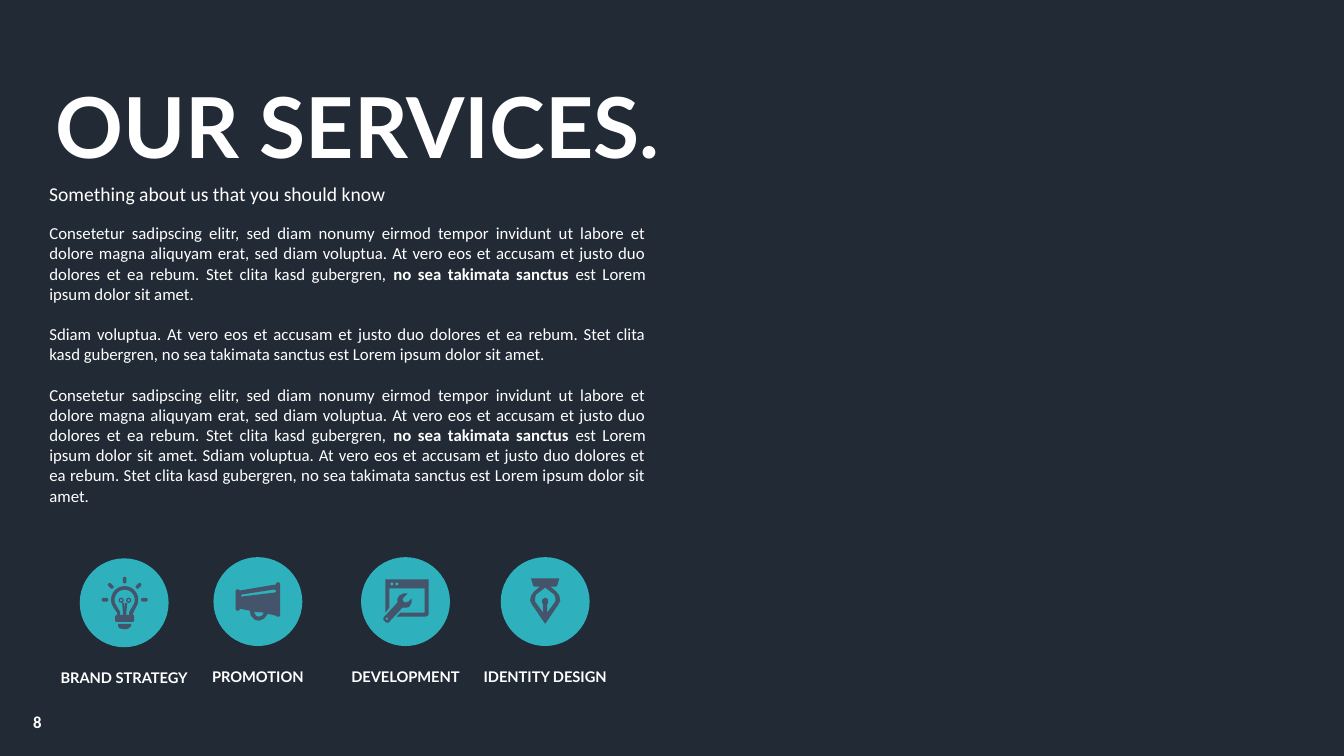
"""Build the "Our services" slide."""
import math

import pptx
import pptx.dml.color
import pptx.enum.shapes
import pptx.enum.text
import pptx.util

Cm, Pt = pptx.util.Cm, pptx.util.Pt
RGB = pptx.dml.color.RGBColor
ALIGN = pptx.enum.text.PP_ALIGN

NAVY = RGB(0x22, 0x2A, 0x35)
TEAL = RGB(0x2E, 0xB0, 0xBD)
SLATE = RGB(0x44, 0x54, 0x6A)
WHITE = RGB(0xFF, 0xFF, 0xFF)

TITLE = "OUR SERVICES."
SUBTITLE = "Something about us that you should know"
OPENING = (
    "Consetetur sadipscing elitr, sed diam nonumy eirmod tempor invidunt ut labore et "
    "dolore magna aliquyam erat, sed diam voluptua. At vero eos et accusam et justo duo "
    "dolores et ea rebum. Stet clita kasd gubergren, "
)
EMPHASIS = "no sea takimata sanctus "
CLOSING = "est Lorem ipsum dolor sit amet."
SECOND = (
    "Sdiam voluptua. At vero eos et accusam et justo duo dolores et ea rebum. "
    "Stet clita kasd gubergren, no sea takimata sanctus est Lorem ipsum dolor sit amet."
)
PARAGRAPHS = [
    [(OPENING, False), (EMPHASIS, True), (CLOSING, False)],
    [(SECOND, False)],
    [(OPENING, False), (EMPHASIS, True), (CLOSING + " " + SECOND, False)],
]
PAGE = "8"
CIRCLE = 2.24
LABEL_DROP = 1.55
ICON_UNIT = Cm(2.54) / 100
FINENESS = 100


def arc(cx, cy, radius, start=0, end=360, steps=24):
    """Return points along an arc, angles in degrees clockwise from the right."""
    angles = [math.radians(start + (end - start) * i / steps) for i in range(steps + 1)]
    return [(cx + radius * math.cos(a), cy + radius * math.sin(a)) for a in angles]


def ray(angle):
    """Return a round-ended ray around the bulb."""
    a = math.radians(angle)
    ends = [(0.5 + d * math.cos(a), -3 + d * math.sin(a)) for d in (21, 18)]
    return (arc(*ends[0], 1.8, angle - 90, angle + 90, 8)
            + arc(*ends[1], 1.8, angle + 90, angle + 270, 8))


BULB = [
    arc(0.5, -3, 13.5, 150, 390) + [
        (9, 10), (9, 12), (10, 13), (10, 18), (9, 19),
        (-8, 19), (-9, 18), (-9, 13), (-7, 12), (-7, 10)],
    arc(0.5, -3, 10, 150, 390) + [(5, 9), (5, 12), (-4, 12), (-4, 9)],
    [(-2, 0), (3, 0), (2, 12), (-1, 12)],
    [(0, 0), (1, 0), (0.5, 7)],
    [(-6, 21), (7, 21), (7, 23), (5, 25), (3, 26), (-2, 26), (-5, 25), (-6, 23)],
] + [arc(x, -2.5, radius) for x in (-3, 4.5) for radius in (2.5, 1.2)] + [
    ray(angle) for angle in range(180, 361, 45)]
MEGAPHONE = [
    [(21, -19), (19, -19), (18, -18), (18, -17), (-18, -11), (-19, -12), (-21, -12),
     (-22, -11), (-22, 8), (-21, 9), (-19, 9), (-18, 8), (-18, 7), (-8, 9), (-7, 14),
     (-3, 18), (1, 19), (6, 17), (10, 12), (18, 14), (19, 15), (21, 15), (22, 14),
     (22, -18)],
    [(-4, 10), (6, 11), (4, 14), (1, 15), (-2, 14)],
    [(17, -9), (-16, -5), (-17, -6), (-16, -7), (16, -12), (18, -11), (18, -10)],
]
WINDOW = [
    [(4, 5), (6, 1), (6, -3), (3, 0), (0, 1), (-2, 0), (-3, -2), (-2, -4), (2, -8),
     (-2, -8), (-6, -6), (-8, -3), (-8, 1), (-22, 16), (-22, 18), (-19, 21), (-17, 21),
     (-3, 6), (1, 6)],
    arc(-18.5, 17, 1.2),
    [(23, -22), (-20, -22), (-20, 11), (-16, 6), (-16, -13), (19, -13), (19, 11),
     (-5, 11), (-9, 15), (20, 15), (22, 14), (23, 12)],
    arc(-13.5, -17.5, 1.5),
    arc(-8.5, -17.5, 1.5),
]
PEN = [
    [(11, -10), (5, -15), (11, -15), (12, -16), (14, -23), (-14, -23), (-12, -16),
     (-11, -15), (-5, -15), (-11, -10), (-14, -6), (-15, -1), (-13, 3), (0, 22),
     (13, 3), (15, -1), (14, -6)],
    [(10, 0), (2, 11), (2, 3), (3, 1), (3, -2), (0, -4), (-3, -2), (-3, 1), (-2, 3),
     (-2, 11), (-10, 0), (-10, -4), (-9, -7), (0, -14), (9, -7), (10, -4)],
]
SERVICES = [
    ("BRAND STRATEGY", 3.13, 15.19, 3.78, BULB),
    ("PROMOTION", 6.5, 15.16, 2.87, MEGAPHONE),
    ("DEVELOPMENT", 10.22, 15.16, 3.28, WINDOW),
    ("IDENTITY DESIGN", 13.74, 15.16, 3.66, PEN),
]


def place(shape, left, top, width, height):
    """Position a shape, in centimetres."""
    shape.left, shape.top, shape.width, shape.height = map(Cm, (left, top, width, height))


def add_run(p, text, font, size, bold=False):
    """Add one white run to a paragraph."""
    r = p.add_run()
    r.text = text
    r.font.name, r.font.size, r.font.bold = font, Pt(size), bold
    r.font.color.rgb = WHITE


def add_text(s, box, text, font, size, bold=False, align=ALIGN.LEFT):
    """Add a one-line text box."""
    tf = s.shapes.add_textbox(*map(Cm, box)).text_frame
    tf.word_wrap = False
    p = tf.paragraphs[0]
    p.alignment = align
    add_run(p, text, font, size, bold)


def paint(shape, color):
    """Give a shape a flat fill without line or shadow."""
    shape.shadow.inherit = False
    shape.fill.solid()
    shape.fill.fore_color.rgb = color
    shape.line.fill.background()


def add_icon(s, x, y, contours):
    """Draw an icon's contours around a centre."""
    fine = [[(px * FINENESS, py * FINENESS) for px, py in c] for c in contours]
    builder = s.shapes.build_freeform(*fine[0][0], scale=ICON_UNIT / FINENESS)
    for i, points in enumerate(fine):
        if i:
            builder.move_to(*points[0])
        builder.add_line_segments(points[1:], close=True)
    paint(builder.convert_to_shape(Cm(x), Cm(y)), SLATE)


def add_service(s, label, x, y, width, contours):
    """Add a service's disc, icon and label."""
    disc = s.shapes.add_shape(
        pptx.enum.shapes.MSO_SHAPE.OVAL,
        Cm(x - CIRCLE / 2), Cm(y - CIRCLE / 2), Cm(CIRCLE), Cm(CIRCLE))
    paint(disc, TEAL)
    add_icon(s, x, y, contours)
    add_text(s, (x - width / 2, y + LABEL_DROP, width, 0.71), label, "Lato", 10.5,
             True, ALIGN.CENTER)


def fill_placeholder(shape, box, paragraphs, font, size, align, gap=0):
    """Move a placeholder and fill it with plain paragraphs."""
    place(shape, *box)
    tf = shape.text_frame
    tf.word_wrap = True
    tf.auto_size = pptx.enum.text.MSO_AUTO_SIZE.NONE
    tf.vertical_anchor = pptx.enum.text.MSO_ANCHOR.TOP
    for i, runs in enumerate(paragraphs):
        p = tf.add_paragraph() if i else tf.paragraphs[0]
        p.alignment = align
        p.space_before = Pt(gap if i else 0)
        pPr = p._p.get_or_add_pPr()
        pPr.set("marL", "0")
        pPr.set("indent", "0")
        pPr.append(pptx.oxml.parse_xml(
            '<a:buNone xmlns:a="http://schemas.openxmlformats.org/drawingml/2006/main"/>'))
        for text, bold in runs:
            add_run(p, text, font, size, bold)


def main():
    """Build and save the slide."""
    prs = pptx.Presentation()
    prs.slide_width, prs.slide_height = Cm(33.87), Cm(19.05)
    s = prs.slides.add_slide(prs.slide_layouts[1])
    s.background.fill.solid()
    s.background.fill.fore_color.rgb = NAVY
    fill_placeholder(s.shapes.title, (1.14, 1.75, 17.07, 1.12), [[(TITLE, True)]],
                     "Lato", 60, ALIGN.LEFT)
    fill_placeholder(s.placeholders[1], (0.99, 5.49, 15.54, 7.95), PARAGRAPHS,
                     "Calibri", 12, ALIGN.JUSTIFY, 14.5)
    add_text(s, (0.99, 4.45, 9.07, 0.86), SUBTITLE, "Calibri", 14)
    for service in SERVICES:
        add_service(s, *service)
    add_text(s, (0.43, 17.81, 1.02, 0.76), PAGE, "Calibri", 12, True, ALIGN.CENTER)
    prs.save("out.pptx")


if __name__ == "__main__":
    main()
